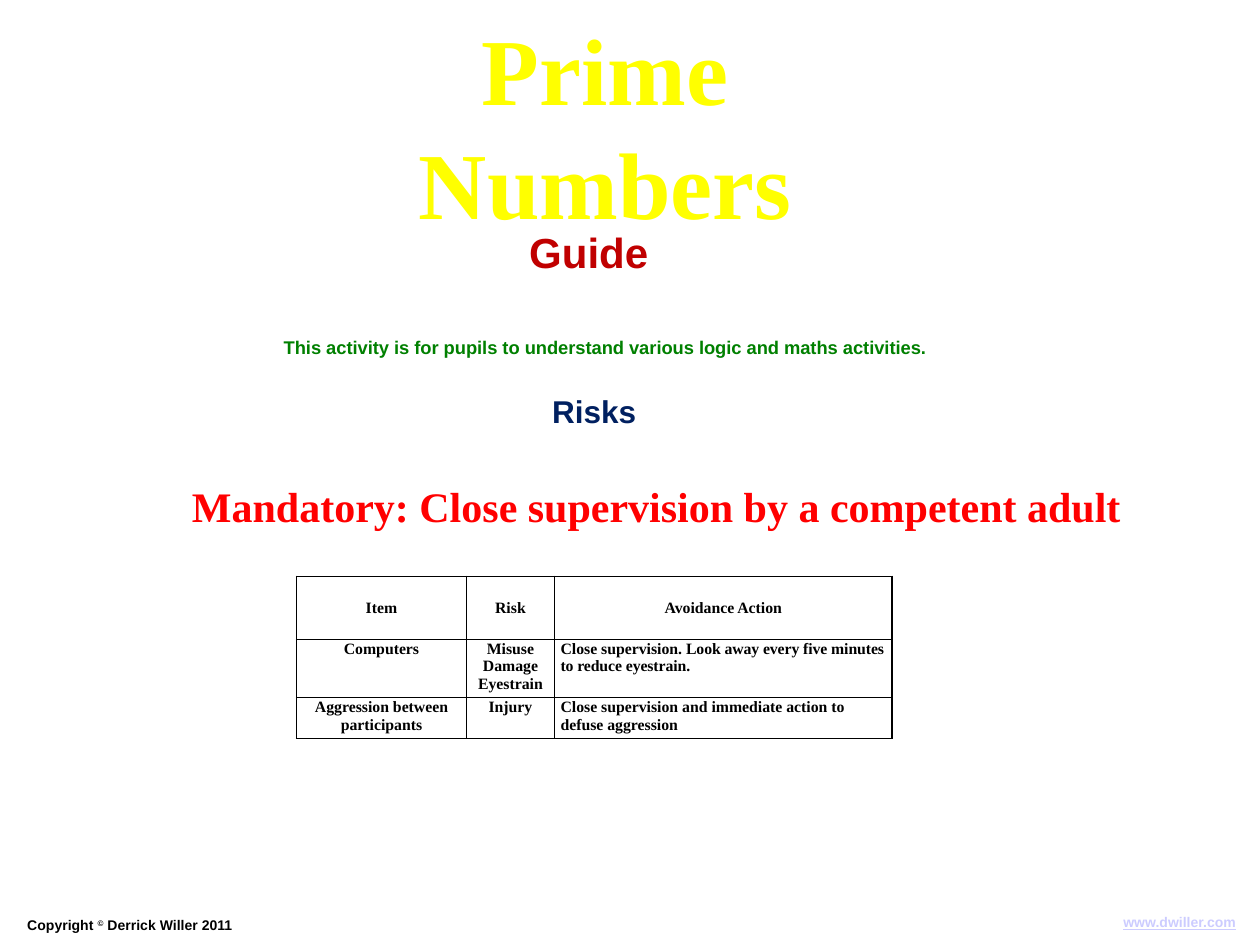
from dataclasses import dataclass

from lxml import etree
from pptx import Presentation
from pptx.dml.color import RGBColor
from pptx.enum.text import MSO_ANCHOR, PP_ALIGN
from pptx.oxml.ns import qn
from pptx.util import Cm, Pt

LEFT, MID, RIGHT = PP_ALIGN.LEFT, PP_ALIGN.CENTER, PP_ALIGN.RIGHT
TOP, CENTER = MSO_ANCHOR.TOP, MSO_ANCHOR.MIDDLE
SERIF, SANS = "Times New Roman", "Arial"


@dataclass(frozen=True)
class Style:
    font: str
    size: float
    color: str
    under: bool = False


@dataclass(frozen=True)
class Theme:
    title: Style = Style(SERIF, 54, "FFFF00")
    guide: Style = Style(SANS, 24, "C00000")
    aim: Style = Style(SANS, 10.5, "008000")
    risks: Style = Style(SANS, 18, "002060")
    alert: Style = Style(SERIF, 24, "FF0000")
    note: Style = Style(SANS, 8, "000000")
    site: Style = Style(SANS, 8, "CCCCFF", True)
    cell: Style = Style(SERIF, 9, "000000")
    rule: str = "000000"
    width: float = 1


THEME = Theme()

HEADS = ("Item", "Risk", "Avoidance Action")
# Each cell holds paragraphs; each paragraph holds runs of (text, attributes).
TIGHT = {"spc": "-5"}
RISKS = (
    (
        [[("Computers", {})]],
        [[("Misuse Damage", {})], [("Eyestrain", {})]],
        [[("Close supervision. ", {}),
          ("Look away every five minutes to reduce eyestrain.", TIGHT)]],
    ),
    (
        [[("Aggression between participants", {})]],
        [[("Injury", {})]],
        [[("Close supervision and immediate action to defuse aggression", {})]],
    ),
)


def add_run(para, text, style, attrs):
    run = para.add_run()
    run.text = text
    font = run.font
    font.name, font.size, font.bold = style.font, Pt(style.size), True
    font.color.rgb = RGBColor.from_string(style.color)
    if style.under:
        font.underline = True
    for key, value in attrs.items():
        run._r.get_or_add_rPr().set(key, value)


def fill_text(frame, paras, style, align):
    for index, runs in enumerate(paras):
        para = frame.add_paragraph() if index else frame.paragraphs[0]
        para.alignment = align
        for text, attrs in runs:
            add_run(para, text, style, attrs)


def add_text(slide, box, runs, style, align=LEFT, wrap=True):
    shape = slide.shapes.add_textbox(*map(Cm, box))
    frame = shape.text_frame
    frame.word_wrap = wrap
    fill_text(frame, [runs], style, align)


def add_edges(cell):
    """Rule all four sides of a cell."""
    props = cell._tc.get_or_add_tcPr()
    for index, side in enumerate(("lnL", "lnR", "lnT", "lnB")):
        line = etree.Element(qn(f"a:{side}"), w=str(Pt(THEME.width)))
        fill = etree.SubElement(line, qn("a:solidFill"))
        etree.SubElement(fill, qn("a:srgbClr"), val=THEME.rule)
        props.insert(index, line)


def add_grid(slide, left, top, cols, rows):
    shape = slide.shapes.add_table(
        len(rows), len(cols), Cm(left), Cm(top), Cm(sum(cols)), Cm(sum(rows)))
    table = shape.table
    table.first_row = table.horz_banding = False
    for col, width in zip(table.columns, cols):
        col.width = Cm(width)
    for row, height in zip(table.rows, rows):
        row.height = Cm(height)
    head = [[[(text, {})]] for text in HEADS]
    for r, line in enumerate((head, *RISKS)):
        for c, paras in enumerate(line):
            cell = table.cell(r, c)
            cell.fill.background()
            cell.margin_left = cell.margin_right = Cm(0.12)
            cell.margin_top, cell.margin_bottom = Cm(0.02), Cm(0)
            cell.vertical_anchor = TOP if r else CENTER
            align = LEFT if r and c == 2 else MID
            fill_text(cell.text_frame, paras, THEME.cell, align)
            add_edges(cell)


def main():
    deck = Presentation()
    deck.slide_width, deck.slide_height = Cm(25.4), Cm(19.05)
    slide = deck.slides.add_slide(deck.slide_layouts[6])

    add_text(slide, (7.1, 0.1, 10.2, 4.3),
             [("Prime Numbers", {})], THEME.title, MID)
    add_text(slide, (0.3, 18.35, 14.35, 0.6),
             [("Copyright ", {}), ("©", {"baseline": "30000"}),
              (" Derrick Willer 2011", {})], THEME.note)
    add_text(slide, (21.77, 18.29, 3.4, 0.6),
             [("www.dwiller.com", {})], THEME.site, RIGHT)
    add_text(slide, (10.42, 4.45, 2.92, 1.27),
             [("Guide", {})], THEME.guide, wrap=False)
    add_text(slide, (5.47, 6.65, 16.97, 0.71),
             [("This activity is for pupils to understand various logic "
               "and maths activities.", {})], THEME.aim)
    add_text(slide, (10.88, 7.77, 2.24, 1.02),
             [("Risks", {})], THEME.risks, wrap=False)
    add_grid(slide, 5.98, 11.62, (3.42, 1.78, 6.8), (1.27, 1.17, 0.83))
    add_text(slide, (3.62, 9.56, 19.43, 1.27),
             [("Mandatory: Close supervision by a competent adult", {})],
             THEME.alert, wrap=False)
    deck.save("out.pptx")


if __name__ == "__main__":
    main()
